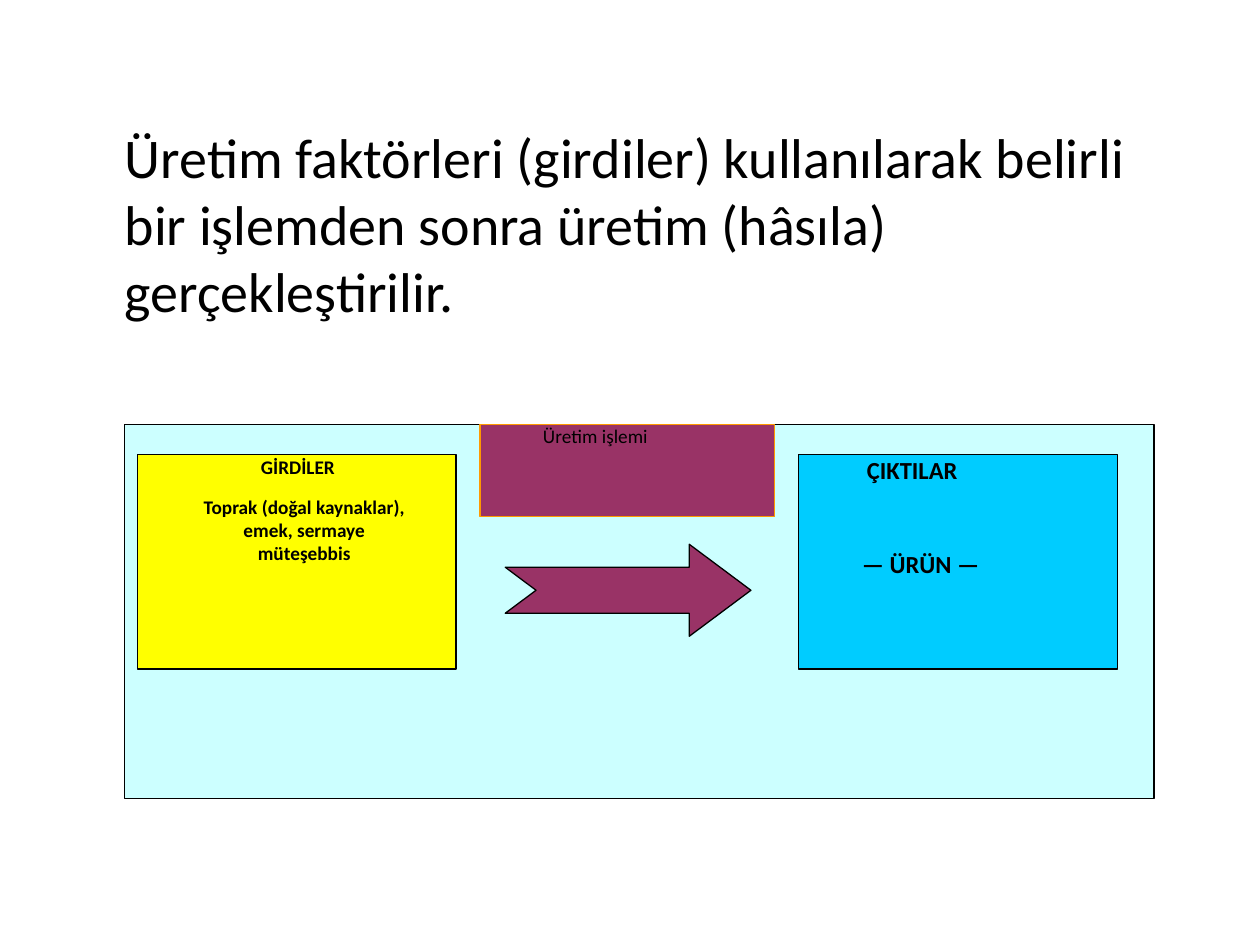
from pptx import Presentation
from pptx.dml.color import RGBColor
from pptx.enum.shapes import MSO_SHAPE
from pptx.enum.text import MSO_ANCHOR, PP_ALIGN
from pptx.util import Inches, Pt

RECTANGLE = MSO_SHAPE.RECTANGLE
NOTCHED_ARROW = MSO_SHAPE.NOTCHED_RIGHT_ARROW
TOP = MSO_ANCHOR.TOP
LEFT, CENTER = PP_ALIGN.LEFT, PP_ALIGN.CENTER

FONT = "Calibri"
COLORS = {
    "black": "000000",
    "panel": "CCFFFF",
    "process": "993366",
    "process_line": "FF9900",
    "inputs": "FFFF00",
    "outputs": "00CCFF",
}


def color(name):
    return RGBColor.from_string(COLORS[name])


def write(para, text, size, bold=False, align=LEFT, indent=0.5, before=None, after=None):
    """Put formatted text into a paragraph; indent is in inches."""
    para.alignment = align
    if before is not None:
        para.space_before = Pt(before)
    if after is not None:
        para.space_after = Pt(after)
    properties = para._p.get_or_add_pPr()
    properties.set("marL", str(Inches(indent)))
    properties.set("indent", "0")
    span = para.add_run()
    span.text = text
    span.font.name = FONT
    span.font.size = Pt(size)
    span.font.bold = bold
    span.font.color.rgb = color("black")
    return properties


class SlideBuilder:
    def __init__(self, slide):
        self.slide = slide

    def statement(self, text, left, top, width, height):
        body = self.slide.placeholders[1]
        body.left, body.top = Inches(left), Inches(top)
        body.width, body.height = Inches(width), Inches(height)
        properties = write(body.text_frame.paragraphs[0], text, 32, indent=0.38)
        properties.insert_element_before(
            properties.makeelement(
                "{http://schemas.openxmlformats.org/drawingml/2006/main}buNone", {}
            ),
            "a:tabLst", "a:defRPr", "a:extLst",
        )

    def shape(self, kind, left, top, width, height, fill, line="black"):
        shape = self.slide.shapes.add_shape(
            kind, Inches(left), Inches(top), Inches(width), Inches(height)
        )
        shape.shadow.inherit = False
        shape.fill.solid()
        shape.fill.fore_color.rgb = color(fill)
        shape.line.color.rgb = color(line)
        shape.line.width = Pt(0.75)
        return shape

    def text_box(self, left, top, width, height, fill, paragraphs, line="black", right_inset=0):
        box = self.shape(RECTANGLE, left, top, width, height, fill, line)
        frame = box.text_frame
        frame.word_wrap = True
        frame.vertical_anchor = TOP
        frame.margin_left = frame.margin_top = frame.margin_bottom = 0
        frame.margin_right = Inches(right_inset)
        for index, (text, style) in enumerate(paragraphs):
            para = frame.add_paragraph() if index else frame.paragraphs[0]
            write(para, text, after=10, **style)


def main():
    deck = Presentation()
    deck.slide_width, deck.slide_height = Inches(10), Inches(7.5)
    page = deck.slides.add_slide(deck.slide_layouts[1])
    title = page.shapes.title._element
    title.getparent().remove(title)
    builder = SlideBuilder(page)

    # Opening statement
    builder.statement(
        "Üretim faktörleri (girdiler) kullanılarak belirli bir işlemden sonra "
        "üretim (hâsıla) gerçekleştirilir.",
        0.51, 0.92, 9, 1.69,
    )

    # Panel and arrow
    builder.shape(RECTANGLE, 0.99, 3.37, 8.17, 2.97, "panel")
    arrow = builder.shape(NOTCHED_ARROW, 4.01, 4.32, 1.95, 0.73, "process")
    arrow.adjustments[0] = 0.5
    arrow.adjustments[1] = 0.67

    # Process, outputs and inputs
    builder.text_box(
        3.81, 3.37, 2.34, 0.73, "process",
        [("Üretim işlemi", dict(size=11, before=3.5))],
        line="process_line",
    )
    builder.text_box(
        6.34, 3.61, 2.53, 1.7, "outputs",
        [
            ("ÇIKTILAR", dict(size=14, bold=True, indent=0.54, before=3.5)),
            ("— ÜRÜN —", dict(size=14, bold=True, before=27)),
        ],
    )
    builder.text_box(
        1.09, 3.61, 2.53, 1.7, "inputs",
        [
            ("GİRDİLER", dict(size=11, bold=True, align=CENTER, indent=0.4, before=3.5)),
            ("Toprak (doğal kaynaklar), emek, sermaye müteşebbis",
             dict(size=11, bold=True, align=CENTER)),
        ],
        right_inset=0.38,
    )

    deck.save("out.pptx")


if __name__ == "__main__":
    main()
